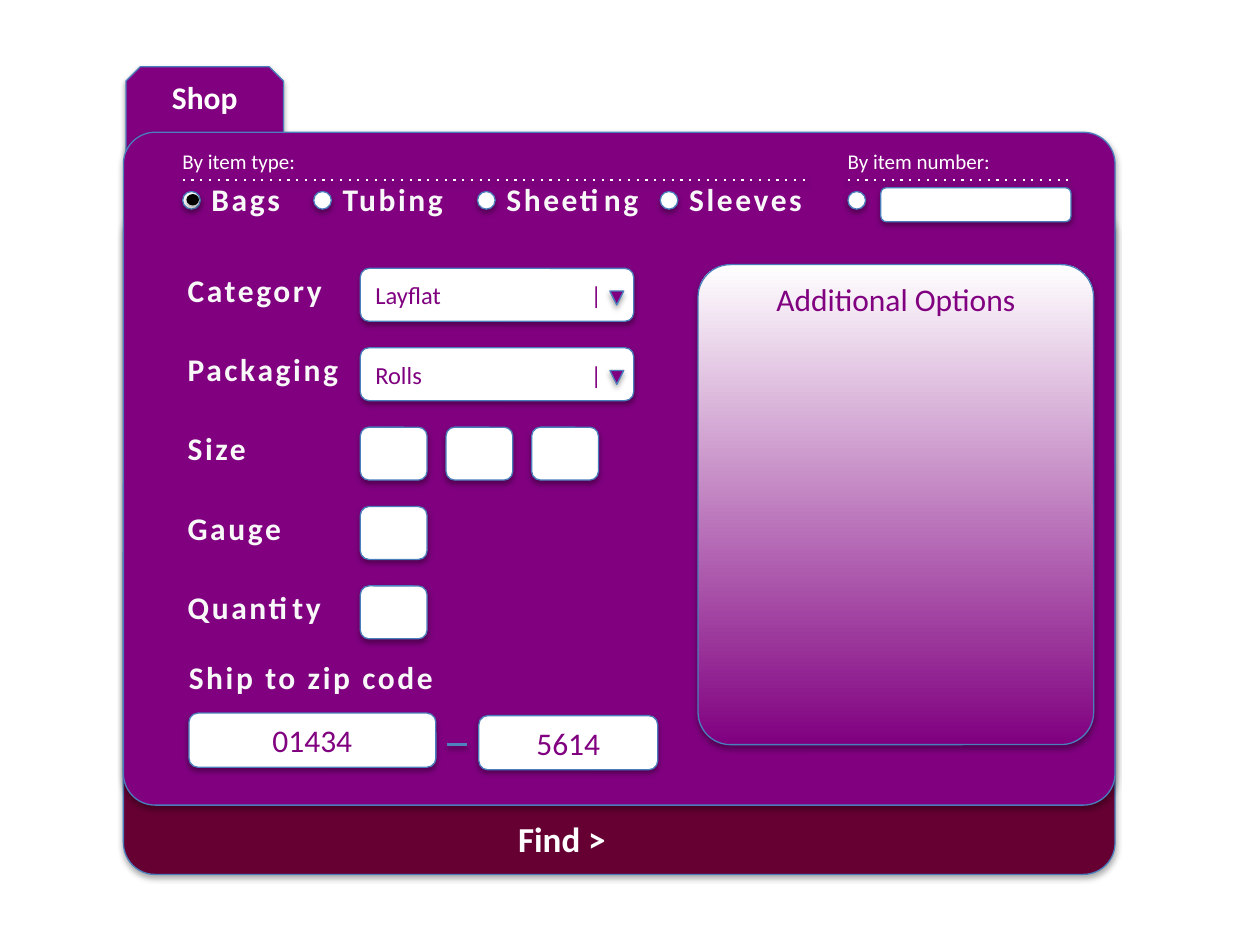
from dataclasses import dataclass, field
from lxml.etree import SubElement
from pptx import Presentation
from pptx.dml.color import RGBColor
from pptx.enum.shapes import MSO_CONNECTOR, MSO_SHAPE
from pptx.enum.text import MSO_ANCHOR, MSO_AUTO_SIZE, PP_ALIGN
from pptx.oxml.ns import qn
from pptx.util import Inches, Pt

HUES = {
    "plum": "800080", "wine": "660033", "white": "FFFFFF", "pale": "F8F8F8",
    "black": "000000", "edge": "4B7EBC", "dash": "4F81BD",
}
LABEL = {"size": 18, "hue": "pale", "bold": True, "spc": 150}
HINT = {"size": 12, "hue": "white"}
ENTRY = {"size": 18, "hue": "plum", "align": PP_ALIGN.CENTER}
PICK = {"size": 14, "hue": "plum", "tab": 1.71}
TAB = {"size": 18, "hue": "white", "bold": True, "align": PP_ALIGN.CENTER}
FIND = {**TAB, "size": 20}

ROUND = MSO_SHAPE.ROUNDED_RECTANGLE
LEFT, FIELD, TOP, STEP = 1.39, 2.86, 2.1, 0.63


@dataclass
class Box:
    x: float
    y: float
    w: float
    h: float
    fill: str = "white"
    kind: MSO_SHAPE = ROUND
    adj: float | None = None
    edge: bool = True
    text: str = ""
    style: dict = field(default_factory=dict)
    frame: dict = field(default_factory=dict)


@dataclass
class Note:
    text: str
    x: float
    y: float
    w: float
    h: float = 0.4
    style: dict = field(default_factory=lambda: LABEL)


@dataclass
class Rule:
    x: float
    end: float
    y: float
    hue: str = "white"
    width: float = 1.25
    dots: bool = True


def tint(name: str) -> RGBColor:
    return RGBColor.from_string(HUES[name])


def shade(props, alpha: int, dist: float) -> None:
    """Give shape properties a soft shadow straight below."""
    old = props.find(qn("a:effectLst"))
    if old is not None:
        props.remove(old)
    drop = SubElement(
        SubElement(props, qn("a:effectLst")), qn("a:outerShdw"),
        blurRad=str(Pt(3.1)), dist=str(Pt(dist)), dir="5400000", rotWithShape="0")
    hue = SubElement(drop, qn("a:srgbClr"), val=HUES["black"])
    SubElement(hue, qn("a:alpha"), val=str(alpha * 1000))


def write(frame, text: str, style: dict, looks: dict) -> None:
    for name, value in {"word_wrap": True, **looks}.items():
        setattr(frame, name, value)
    para = frame.paragraphs[0]
    para.alignment = style.get("align", PP_ALIGN.LEFT)
    if "tab" in style:
        tabs = SubElement(para._p.get_or_add_pPr(), qn("a:tabLst"))
        SubElement(tabs, qn("a:tab"), pos=str(Inches(style["tab"])), algn="l")
    run = para.add_run()
    run.text = text
    font = {"name": "Calibri", "size": Pt(style["size"]), "bold": style.get("bold", False)}
    for name, value in font.items():
        setattr(run.font, name, value)
    run.font.color.rgb = tint(style["hue"])
    if "spc" in style:
        run._r.get_or_add_rPr().set("spc", str(style["spc"]))


def draw_box(slide, box: Box):
    area = map(Inches, (box.x, box.y, box.w, box.h))
    shape = slide.shapes.add_shape(box.kind, *area)
    shape.shadow.inherit = False
    if box.adj is not None:
        shape.adjustments[0] = box.adj
    shape.fill.solid()
    shape.fill.fore_color.rgb = tint(box.fill)
    if box.edge:
        shape.line.color.rgb = tint("edge")
        shape.line.width = Pt(0.75)
    else:
        shape.line.fill.background()
    shade(shape._element.spPr, 35, 1.8)
    if box.text:
        looks = {"vertical_anchor": MSO_ANCHOR.MIDDLE, **box.frame}
        write(shape.text_frame, box.text, box.style, looks)
    return shape


def draw_note(slide, note: Note) -> None:
    area = map(Inches, (note.x, note.y, note.w, note.h))
    frame = slide.shapes.add_textbox(*area).text_frame
    write(frame, note.text, note.style, {"auto_size": MSO_AUTO_SIZE.SHAPE_TO_FIT_TEXT})


def draw_rule(slide, rule: Rule) -> None:
    ends = map(Inches, (rule.x, rule.y, rule.end, rule.y))
    line = slide.shapes.add_connector(MSO_CONNECTOR.STRAIGHT, *ends)
    line.line.color.rgb = tint(rule.hue)
    line.line.width = Pt(rule.width)
    props = line._element.spPr
    if rule.dots:
        SubElement(props.find(qn("a:ln")), qn("a:prstDash"), val="dot")
    shade(props, 38, 1.6)


def draw_radio(slide, x: float) -> None:
    draw_box(slide, Box(x, 1.52, 0.14, 0.14, kind=MSO_SHAPE.OVAL))


def draw_panel(slide) -> None:
    draw_box(slide, Box(0.98, 1.6, 7.87, 5.34, "wine", adj=0.047))
    draw_box(slide, Box(1, 0.53, 1.25, 0.68, "plum", MSO_SHAPE.SNIP_2_SAME_RECTANGLE,
                        text="Shop", style=TAB, frame={"margin_bottom": Inches(0.3)}))
    draw_box(slide, Box(0.98, 1.05, 7.87, 5.34, "plum", adj=0.047))
    draw_note(slide, Note("Find >", 3.55, 6.44, 1.82, 0.44, FIND))


def draw_search(slide) -> None:
    radios = {"Bags": 1.45, "Tubing": 2.49, "Sheeting": 3.79, "Sleeves": 5.24}
    for text, x in radios.items():
        draw_radio(slide, x)
        draw_note(slide, Note(text, x + 0.13, 1.38, 1.62))
    draw_box(slide, Box(1.48, 1.54, 0.1, 0.09, "black", MSO_SHAPE.OVAL, edge=False))
    draw_radio(slide, 6.73)
    draw_box(slide, Box(6.99, 1.49, 1.51, 0.27))
    for text, x, end in (("By item type:", 1.45, 6.41), ("By item number:", 6.73, 8.5)):
        draw_note(slide, Note(text, x - 0.1, 1.13, 2.87, 0.3, HINT))
        draw_rule(slide, Rule(x, end, 1.43))


def draw_form(slide) -> None:
    picks = {"Category": "Layflat", "Packaging": "Rolls"}
    cells = {"Size": 3, "Gauge": 1, "Quantity": 1}
    for row, label in enumerate([*picks, *cells]):
        y = TOP + row * STEP
        draw_note(slide, Note(label, LEFT, y, 1.41))
        if label in picks:
            draw_box(slide, Box(FIELD, y + 0.03, 2.17, 0.42,
                                text=f"{picks[label]}\t|", style=PICK))
            draw_box(slide, Box(4.84, y + 0.21, 0.11, 0.11, "plum",
                                MSO_SHAPE.FLOWCHART_MERGE))
        for col in range(cells.get(label, 0)):
            draw_box(slide, Box(FIELD + col * 0.68, y + 0.03, 0.53, 0.42))


def draw_zip(slide) -> None:
    draw_note(slide, Note("Ship to zip code", 1.4, 5.17, 2.57))
    draw_box(slide, Box(1.5, 5.66, 1.96, 0.43, text="01434", style=ENTRY))
    draw_box(slide, Box(3.8, 5.68, 1.42, 0.43, text="5614", style=ENTRY))
    draw_rule(slide, Rule(3.55, 3.71, 5.91, "dash", 2, False))


def draw_extras(slide) -> None:
    shape = draw_box(slide, Box(5.54, 2.1, 3.14, 3.81, adj=0.082,
                                text="Additional Options", style=ENTRY,
                                frame={"vertical_anchor": MSO_ANCHOR.TOP}))
    shape.fill.gradient()
    shape.fill.gradient_angle = 90
    for stop, hue in zip(shape.fill.gradient_stops, ("plum", "white")):
        stop.color.rgb = tint(hue)


def main() -> None:
    deck = Presentation()
    deck.slide_width, deck.slide_height = Inches(10), Inches(7.5)
    slide = deck.slides.add_slide(deck.slide_layouts[6])
    for draw in (draw_panel, draw_search, draw_form, draw_zip, draw_extras):
        draw(slide)
    deck.save("out.pptx")


if __name__ == "__main__":
    main()
